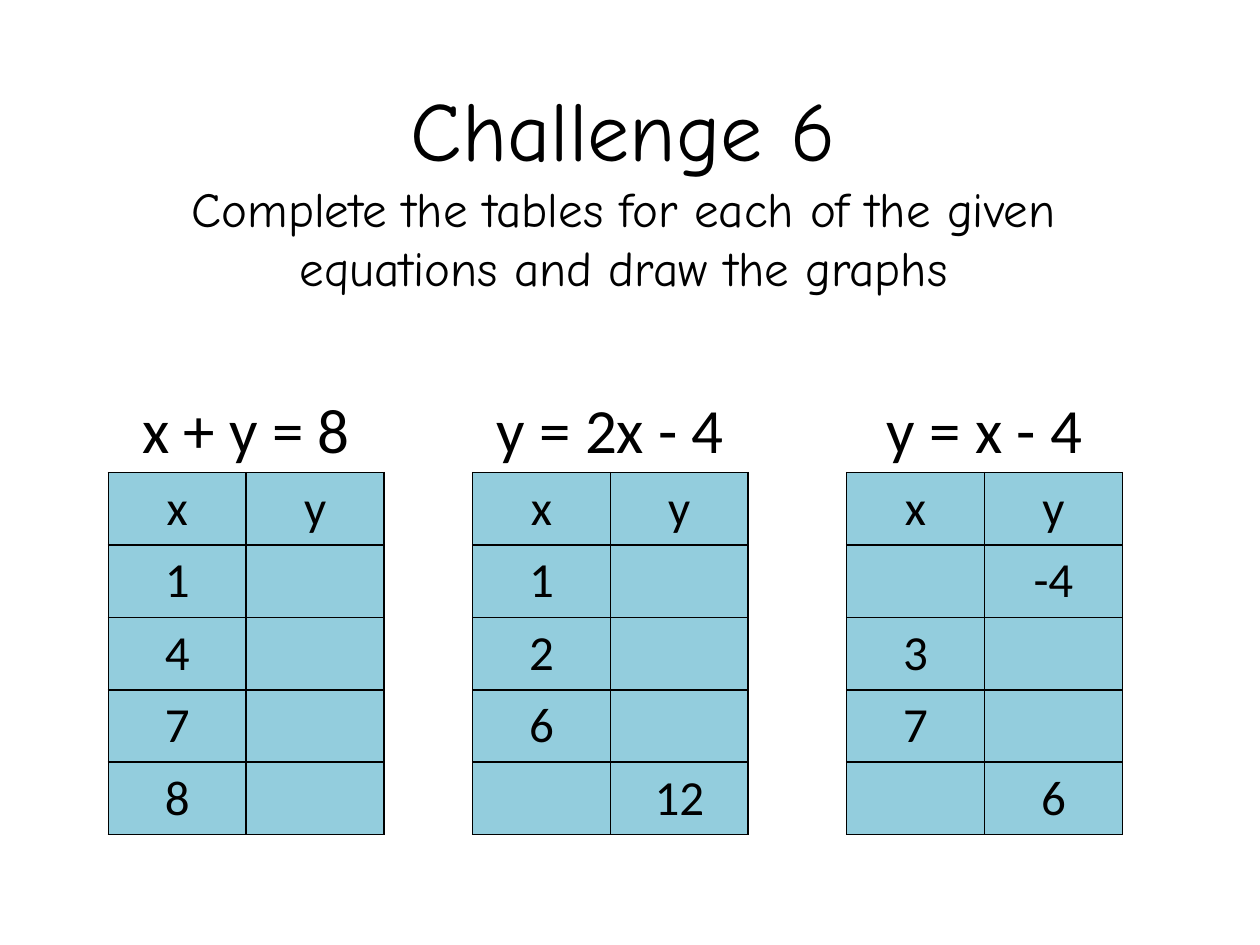
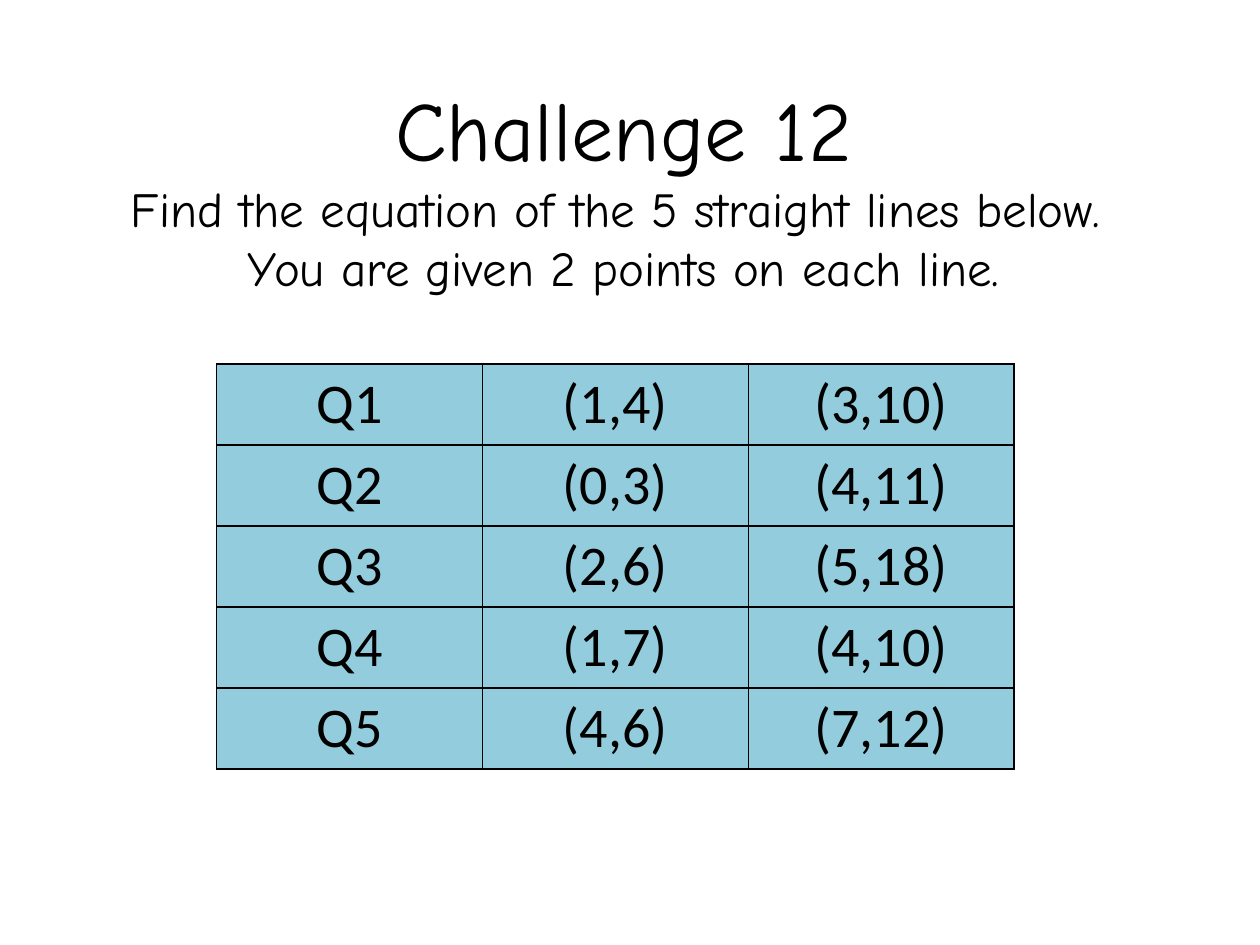
from lxml import etree
from pptx import Presentation
from pptx.dml.color import RGBColor
from pptx.enum.text import MSO_ANCHOR, PP_ALIGN
from pptx.oxml.ns import qn
from pptx.util import Pt

CENTER = PP_ALIGN.CENTER
TOP, MIDDLE = MSO_ANCHOR.TOP, MSO_ANCHOR.MIDDLE
BLACK = RGBColor(0x00, 0x00, 0x00)
AQUA = RGBColor(0x93, 0xCD, 0xDD)
TITLE_FONT, BODY_FONT = "Comic Neue", "Calibri"
BORDER_WIDTH = Pt(1)

TITLE_BOX = (44.6, 33.8, 623.5, 146.2)
EQUATION_TOP, EQUATION_HEIGHT = 219.6, 51
VALUES_TOP, VALUES_WIDTH, VALUES_ROW = 270, 157.6, 41.4
POINTS_LEFT, POINTS_TOP, POINTS_WIDTH, POINTS_ROW = 123.8, 208, 455.8, 46.3

EQUATIONS = [
    (61.9, "x + y = 8", [("1", ""), ("4", ""), ("7", ""), ("8", "")]),
    (270, "y = 2x - 4", [("1", ""), ("2", ""), ("6", ""), ("", "12")]),
    (483.8, "y = x - 4", [("", "-4"), ("3", ""), ("7", ""), ("", "6")]),
]
LINE_POINTS = [
    ("(1,4)", "(3,10)"),
    ("(0,3)", "(4,11)"),
    ("(2,6)", "(5,18)"),
    ("(1,7)", "(4,10)"),
    ("(4,6)", "(7,12)"),
]


def write_paragraph(paragraph, text, font_name, size):
    """Fill a paragraph with centred black text."""
    paragraph.text = text
    paragraph.alignment = CENTER
    for attribute, value in {"name": font_name, "size": Pt(size)}.items():
        setattr(paragraph.font, attribute, value)
    paragraph.font.color.rgb = BLACK


def add_text(slide, box, lines, font_name, anchor):
    """Add a wrapping text box with one paragraph per (text, size) pair."""
    frame = slide.shapes.add_textbox(*map(Pt, box)).text_frame
    for attribute, value in {"word_wrap": True, "vertical_anchor": anchor}.items():
        setattr(frame, attribute, value)
    for index, (text, size) in enumerate(lines):
        paragraph = frame.add_paragraph() if index else frame.paragraphs[0]
        write_paragraph(paragraph, text, font_name, size)


def add_borders(cell):
    """Draw a black line on all four sides of a cell."""
    properties = cell._tc.get_or_add_tcPr()
    for side in ("a:lnL", "a:lnR", "a:lnT", "a:lnB"):
        line = etree.SubElement(properties, qn(side), w=str(BORDER_WIDTH))
        fill = etree.SubElement(line, qn("a:solidFill"))
        etree.SubElement(fill, qn("a:srgbClr"), val=str(BLACK))


def add_grid(slide, left, top, width, row_height, rows, size):
    """Add a bordered aqua table with equal columns and rows."""
    column_count = len(rows[0])
    table = slide.shapes.add_table(
        len(rows), column_count, Pt(left), Pt(top), Pt(width), Pt(row_height * len(rows))
    ).table
    for attribute in ("first_row", "horz_banding"):
        setattr(table, attribute, False)
    for row_index, row in enumerate(rows):
        for column_index, text in enumerate(row):
            cell = table.cell(row_index, column_index)
            add_borders(cell)
            cell.fill.solid()
            cell.fill.fore_color.rgb = AQUA
            write_paragraph(cell.text_frame.paragraphs[0], text, BODY_FONT, size)


def add_challenge(presentation, number, task):
    """Add a slide headed by the challenge number and its task."""
    slide = presentation.slides.add_slide(presentation.slide_layouts[6])
    lines = [(f"Challenge {number}", 48), (task, 28)]
    add_text(slide, TITLE_BOX, lines, TITLE_FONT, MIDDLE)
    return slide


def add_equation(slide, left, equation, values):
    """Add an equation above its table of x and y values."""
    add_grid(slide, left, VALUES_TOP, VALUES_WIDTH, VALUES_ROW, [("x", "y"), *values], 28)
    box = (left, EQUATION_TOP, VALUES_WIDTH, EQUATION_HEIGHT)
    add_text(slide, box, [(equation, 36)], BODY_FONT, TOP)


def main():
    """Build both challenge slides and save them."""
    presentation = Presentation()
    presentation.slide_width, presentation.slide_height = Pt(720), Pt(540)

    slide = add_challenge(
        presentation, 6,
        "Complete the tables for each of the given equations and draw the graphs",
    )
    for left, equation, values in EQUATIONS:
        add_equation(slide, left, equation, values)

    slide = add_challenge(
        presentation, 12,
        "Find the equation of the 5 straight lines below.  You are given 2 points on each line.",
    )
    rows = [(f"Q{number}", *points) for number, points in enumerate(LINE_POINTS, 1)]
    add_grid(slide, POINTS_LEFT, POINTS_TOP, POINTS_WIDTH, POINTS_ROW, rows, 32)

    presentation.save("out.pptx")


if __name__ == "__main__":
    main()
